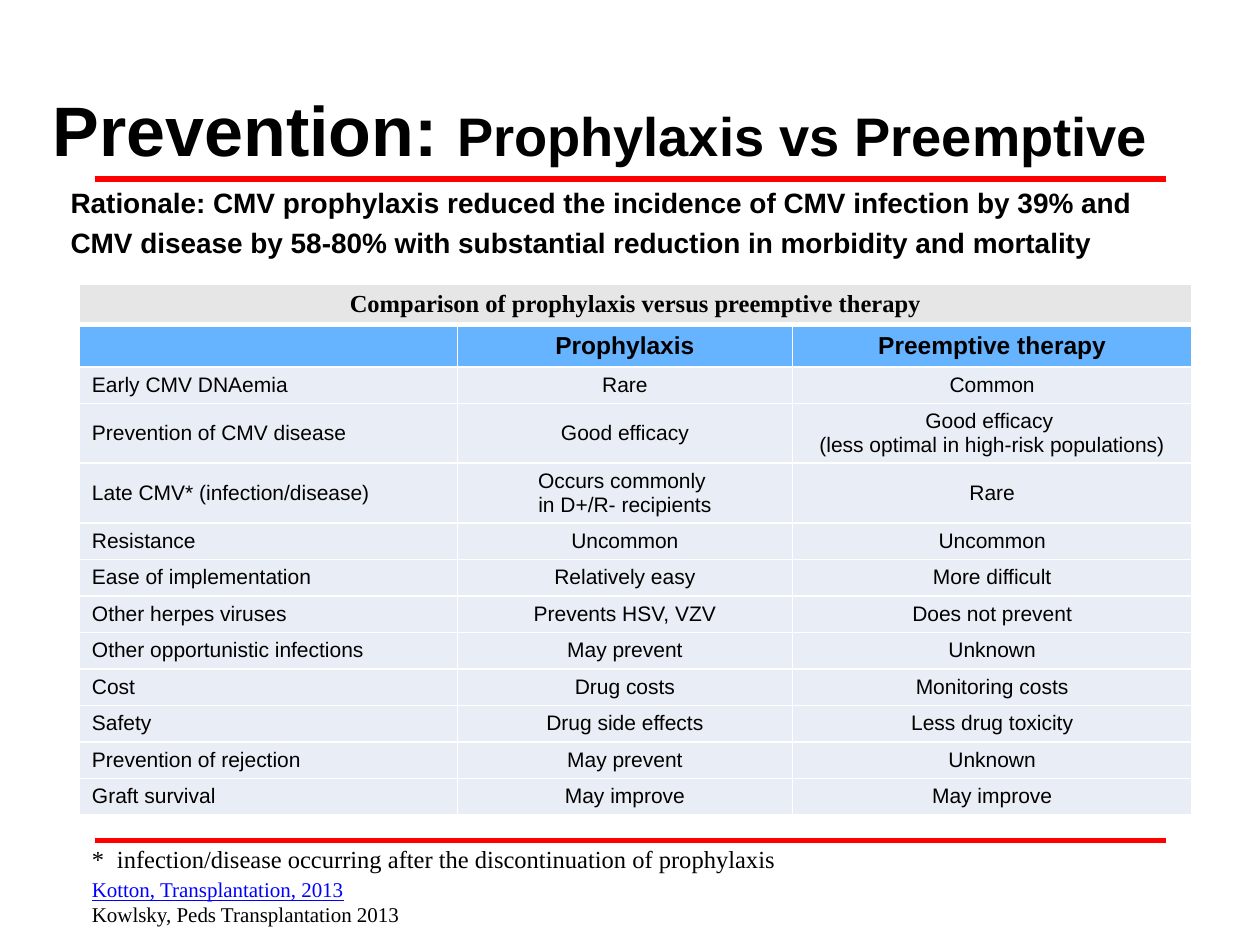
import pptx
import pptx.dml.color
import pptx.enum.shapes
import pptx.enum.text
import pptx.oxml.ns
import pptx.util
from lxml import etree
from pptx.util import Inches

COLORS = {
    "text": "000000",
    "rule": "FF0000",
    "link": "0000FF",
    "border": "FFFFFF",
    "caption": "E6E6E6",
    "header": "66B3FF",
    "row": "E9EDF5",
}
SANS, SERIF = "Arial", "Times New Roman"
ALIGN = pptx.enum.text.PP_ALIGN
ANCHOR = pptx.enum.text.MSO_ANCHOR

COLUMN_WIDTHS = [3, 2.66, 3.17]
CAPTION = "Comparison of prophylaxis versus preemptive therapy"
HEADERS = ["", "Prophylaxis", "Preemptive therapy"]
COMPARISON = [
    ["Early CMV DNAemia", "Rare", "Common"],
    ["Prevention of CMV disease", "Good efficacy",
     "Good efficacy \n(less optimal in high-risk populations)"],
    ["Late CMV* (infection/disease)", "Occurs commonly \nin D+/R- recipients", "Rare"],
    ["Resistance", "Uncommon", "Uncommon"],
    ["Ease of implementation", "Relatively easy", "More difficult"],
    ["Other herpes viruses", "Prevents HSV, VZV", "Does not prevent"],
    ["Other opportunistic infections", "May prevent", "Unknown"],
    ["Cost", "Drug costs", "Monitoring costs"],
    ["Safety", "Drug side effects", "Less drug toxicity"],
    ["Prevention of rejection", "May prevent", "Unknown"],
    ["Graft survival", "May improve", "May improve"],
]


def rgb(name):
    return pptx.dml.color.RGBColor.from_string(COLORS[name])


def add_run(paragraph, text, size, font=SANS, color="text", bold=False, underline=False):
    run = paragraph.add_run()
    run.text = text
    run.font.size = pptx.util.Pt(size)
    run.font.name = font
    run.font.bold = bold
    run.font.underline = underline
    run.font.color.rgb = rgb(color)


def add_child(parent, tag, **attributes):
    return etree.SubElement(parent, pptx.oxml.ns.qn(tag), **attributes)


def next_paragraph(text_frame, index):
    return text_frame.add_paragraph() if index else text_frame.paragraphs[0]


def place(shape, left, top, width, height):
    shape.left, shape.top = Inches(left), Inches(top)
    shape.width, shape.height = Inches(width), Inches(height)


def add_rule(slide, left, top, width):
    line = slide.shapes.add_connector(
        pptx.enum.shapes.MSO_CONNECTOR.STRAIGHT,
        Inches(left), Inches(top), Inches(left + width), Inches(top))
    line.line.color.rgb = rgb("rule")
    line.line.width = pptx.util.Pt(3)
    add_child(line._element.spPr, "a:effectLst")


def fill_title(slide, left, top, width, height):
    title = slide.shapes.title
    place(title, left, top, width, height)
    frame = title.text_frame
    frame.auto_size = pptx.enum.text.MSO_AUTO_SIZE.NONE
    frame.vertical_anchor = ANCHOR.BOTTOM
    paragraph = frame.paragraphs[0]
    paragraph.alignment = ALIGN.LEFT
    add_run(paragraph, "Prevention: ", 40, bold=True)
    add_run(paragraph, "Prophylaxis vs Preemptive", 31, bold=True)


def fill_rationale(slide, left, top, width, height):
    body = slide.placeholders[1]
    place(body, left, top, width, height)
    frame = body.text_frame
    frame.auto_size = pptx.enum.text.MSO_AUTO_SIZE.NONE
    lines = [
        "Rationale: CMV prophylaxis reduced the incidence of CMV infection by 39% and",
        "CMV disease by 58-80% with substantial reduction in morbidity and mortality",
    ]
    for index, text in enumerate(lines):
        paragraph = next_paragraph(frame, index)
        paragraph.space_before = pptx.util.Pt(3.7)
        add_run(paragraph, text, 16, bold=True)
        properties = paragraph._p.get_or_add_pPr()
        properties.set("marL", "0")
        properties.set("indent", "0")
        add_child(properties, "a:buNone")


def set_borders(cell, top=1, bottom=1):
    properties = cell._tc.get_or_add_tcPr()
    widths = {"a:lnL": 1, "a:lnR": 1, "a:lnT": top, "a:lnB": bottom}
    for tag, width in widths.items():
        line = add_child(properties, tag, w=str(pptx.util.Pt(width)))
        add_child(add_child(line, "a:solidFill"), "a:srgbClr", val=COLORS["border"])


def fill_cell(cell, text, fill, alignment, size, top=1, bottom=1, **font):
    set_borders(cell, top, bottom)
    cell.fill.solid()
    cell.fill.fore_color.rgb = rgb(fill)
    cell.vertical_anchor = ANCHOR.MIDDLE
    for index, line in enumerate(text.split("\n")):
        paragraph = next_paragraph(cell.text_frame, index)
        paragraph.alignment = alignment
        if line:
            add_run(paragraph, line, size, **font)
        else:
            add_child(paragraph._p, "a:endParaRPr", sz=str(size * 100))


def add_comparison_table(slide, left, top, width, height):
    rows = [[CAPTION, "", ""], HEADERS] + COMPARISON
    table = slide.shapes.add_table(
        len(rows), len(COLUMN_WIDTHS),
        Inches(left), Inches(top), Inches(width), Inches(height)).table
    table.first_row = table.horz_banding = False
    for column, column_width in zip(table.columns, COLUMN_WIDTHS):
        column.width = Inches(column_width)
    for row_index, texts in enumerate(rows):
        two_lines = any("\n" in text for text in texts)
        row_height = 0.31 if row_index < 2 else 0.47 if two_lines else 0.29
        table.rows[row_index].height = Inches(row_height)
        for column_index, text in enumerate(texts):
            cell = table.cell(row_index, column_index)
            if row_index == 0:
                fill_cell(cell, text, "caption", ALIGN.CENTER, 14, bottom=3,
                          font=SERIF, bold=True)
            elif row_index == 1:
                fill_cell(cell, text, "header", ALIGN.CENTER, 14, top=3, bold=True)
            else:
                alignment = ALIGN.CENTER if column_index else ALIGN.LEFT
                fill_cell(cell, text, "row", alignment, 12)
    table.cell(0, 0).merge(table.cell(0, len(COLUMN_WIDTHS) - 1))


def add_text_box(slide, left, top, width, height):
    box = slide.shapes.add_textbox(
        Inches(left), Inches(top), Inches(width), Inches(height))
    box.text_frame.word_wrap = True
    return box.text_frame


def add_footnote(slide, left, top, width, height):
    paragraph = add_text_box(slide, left, top, width, height).paragraphs[0]
    add_run(paragraph, "*\tinfection/disease occurring after the discontinuation of prophylaxis",
            14, SERIF)
    properties = paragraph._p.get_or_add_pPr()
    properties.set("marL", str(Inches(0.2)))
    properties.set("indent", str(Inches(-0.2)))


def add_references(slide, left, top, width, height):
    frame = add_text_box(slide, left, top, width, height)
    add_run(frame.paragraphs[0], "Kotton, Transplantation, 2013", 12, SERIF,
            color="link", underline=True)
    add_run(frame.add_paragraph(), "Kowlsky, Peds Transplantation 2013", 12, SERIF)


def main():
    presentation = pptx.Presentation()
    presentation.slide_width, presentation.slide_height = Inches(10), Inches(7.5)
    slide = presentation.slides.add_slide(presentation.slide_layouts[1])
    for top in (1.42, 6.67):
        add_rule(slide, 0.75, top, 8.5)
    fill_title(slide, 0.32, 0.4, 9.4, 1)
    fill_rationale(slide, 0.46, 1.42, 9.5, 0.83)
    add_comparison_table(slide, 0.63, 2.26, sum(COLUMN_WIDTHS), 4.15)
    add_footnote(slide, 0.63, 6.65, 5.79, 0.34)
    add_references(slide, 0.63, 6.91, 2.92, 0.5)
    presentation.save("out.pptx")


if __name__ == "__main__":
    main()
